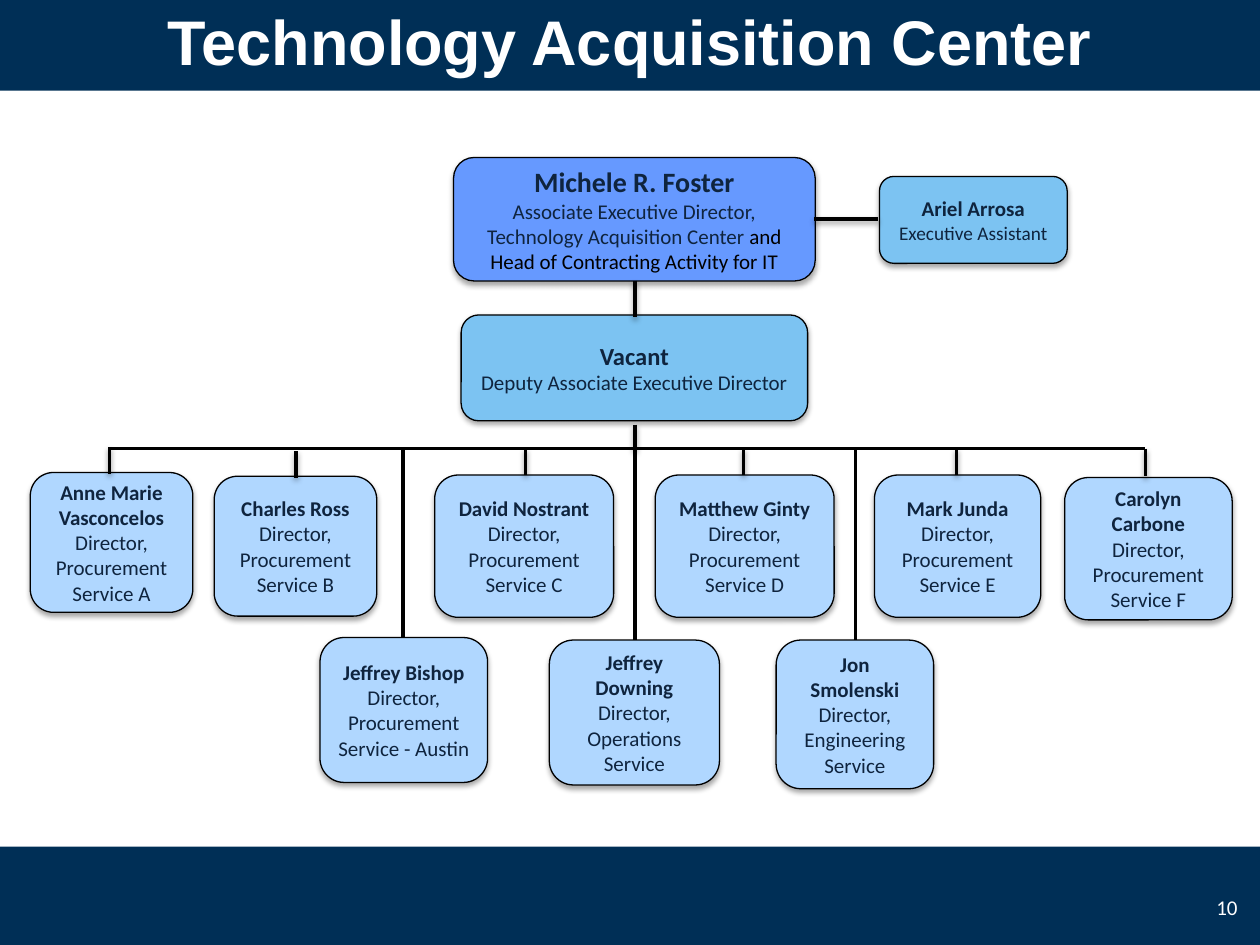
from lxml.etree import SubElement
from pptx import Presentation
from pptx.dml.color import RGBColor
from pptx.enum.shapes import MSO_CONNECTOR, MSO_SHAPE
from pptx.enum.text import MSO_ANCHOR, PP_ALIGN
from pptx.oxml.ns import qn
from pptx.util import Inches, Pt

COLORS = {
    "navy": "002F56", "white": "FFFFFF", "black": "000000", "ink": "0F243E",
    "chief": "6699FF", "deputy": "7CC3F2", "director": "B0D7FF",
}
BUS_Y = 3.56
TRUNK_X = 5.04

DIRECTORS = [
    ((0.24, 3.75, 1.29, 1.11), "Anne Marie Vasconcelos", "Procurement Service A"),
    ((1.7, 3.78, 1.29, 1.11), "Charles Ross", "Procurement Service B"),
    ((3.45, 3.77, 1.42, 1.13), "David Nostrant", "Procurement Service C"),
    ((5.2, 3.77, 1.42, 1.13), "Matthew Ginty", "Procurement Service D"),
    ((6.94, 3.77, 1.32, 1.13), "Mark Junda", "Procurement Service E"),
    ((8.45, 3.79, 1.33, 1.13), "Carolyn Carbone", "Procurement Service F"),
    ((2.54, 5.06, 1.33, 1.15), "Jeffrey Bishop", "Procurement Service - Austin"),
    ((4.36, 5.08, 1.35, 1.15), "Jeffrey Downing", "Operations Service"),
    ((6.16, 5.08, 1.25, 1.18), "Jon Smolenski", "Engineering Service"),
]
BUS_LINES = [
    (0.87, BUS_Y, 9.09, BUS_Y), (3.2, BUS_Y, 3.2, 5.06),
    (TRUNK_X, BUS_Y, TRUNK_X, 5.08), (6.79, BUS_Y, 6.79, 5.08),
]
LINKS = [
    (6.46, 1.74, 6.97, 1.74),
    (TRUNK_X, 2.23, TRUNK_X, 2.52), (TRUNK_X, 3.37, TRUNK_X, 3.58),
    (0.87, 3.55, 0.87, 3.76), (2.35, 3.58, 2.35, 3.79),
    (4.17, BUS_Y, 4.17, 3.77), (5.9, BUS_Y, 5.9, 3.77),
    (7.59, BUS_Y, 7.59, 3.77), (9.09, BUS_Y, 9.09, 3.78),
]


def rgb(name):
    return RGBColor.from_string(COLORS[name])


def set_shadow(s, alpha=0, distance=0):
    effects = SubElement(s._element.spPr, qn("a:effectLst"))
    if alpha:
        shadow = SubElement(effects, qn("a:outerShdw"), blurRad=str(Pt(3.1)),
                            dist=str(Pt(distance)), dir="5400000", rotWithShape="0")
        color = SubElement(shadow, qn("a:srgbClr"), val=COLORS["black"])
        SubElement(color, qn("a:alpha"), val=str(alpha * 1000))


def add_runs(p, runs, align=PP_ALIGN.CENTER):
    p.alignment = align
    for text, size, bold, color, font in runs:
        r = p.add_run()
        r.text = text
        for key, value in {"size": Pt(size), "bold": bold, "name": font}.items():
            setattr(r.font, key, value)
        r.font.color.rgb = rgb(color)


def format_frame(tf, side=0.08, edge=0.08):
    settings = {
        "word_wrap": True, "vertical_anchor": MSO_ANCHOR.MIDDLE,
        "margin_left": Inches(side), "margin_right": Inches(side),
        "margin_top": Inches(edge), "margin_bottom": Inches(edge),
    }
    for key, value in settings.items():
        setattr(tf, key, value)


def add_band(slide, top):
    s = slide.shapes.add_shape(MSO_SHAPE.RECTANGLE, 0, Inches(top), Inches(10), Inches(0.8))
    s.fill.solid()
    s.fill.fore_color.rgb = rgb("navy")
    s.line.fill.background()
    s.shadow.inherit = False


def add_label(slide, at, run, align):
    tf = slide.shapes.add_textbox(*map(Inches, at)).text_frame
    format_frame(tf, 0.1, 0.05)
    add_runs(tf.paragraphs[0], [run], align)


def add_box(slide, at, fill, paragraphs, side=0.08):
    s = slide.shapes.add_shape(MSO_SHAPE.ROUNDED_RECTANGLE, *map(Inches, at))
    s.fill.solid()
    s.fill.fore_color.rgb = rgb(fill)
    s.line.color.rgb = rgb("black")
    s.line.width = Pt(0.75)
    set_shadow(s, 35, 1.8)
    tf = s.text_frame
    format_frame(tf, side)
    for i, runs in enumerate(paragraphs):
        p = tf.add_paragraph() if i else tf.paragraphs[0]
        add_runs(p, runs)


def add_person(slide, at, fill, name, role, name_size=12, role_size=12, side=0.08):
    add_box(slide, at, fill, [
        [(name, name_size, True, "ink", "Calibri")],
        [(role, role_size, False, "ink", "Calibri")],
    ], side)


def add_line(slide, ends, alpha=0):
    s = slide.shapes.add_connector(MSO_CONNECTOR.STRAIGHT, *map(Inches, ends))
    s.line.color.rgb = rgb("black")
    s.line.width = Pt(2)
    set_shadow(s, alpha, 1.6)


def main():
    prs = Presentation()
    prs.slide_width, prs.slide_height = Inches(10), Inches(7.5)
    slide = prs.slides.add_slide(prs.slide_layouts[6])

    for top in (6.72, -0.08):
        add_band(slide, top)
    add_label(slide, (9.5, 7, 0.42, 0.4), ("10", 12, False, "white", "Calibri"), PP_ALIGN.RIGHT)

    for ends in BUS_LINES:
        add_line(slide, ends)

    add_box(slide, (3.6, 1.25, 2.87, 0.98), "chief", [
        [("Michele R. Foster", 16, True, "ink", "Calibri")],
        [("Associate Executive Director,", 12, False, "ink", "Calibri")],
        [("Technology Acquisition Center ", 12, False, "ink", "Calibri"),
         ("and Head of Contracting Activity for IT", 12, False, "black", "Calibri")],
    ])
    add_person(slide, (6.98, 1.4, 1.49, 0.69), "deputy",
               "Ariel Arrosa", "Executive Assistant", role_size=11)
    add_person(slide, (3.66, 2.5, 2.75, 0.84), "deputy",
               "Vacant", "Deputy Associate Executive Director", name_size=14)
    for at, name, service in DIRECTORS:
        side = 0.12 if at[2] < 1.29 else 0.08
        add_person(slide, at, "director", name, f"Director, {service}", side=side)

    for ends in LINKS:
        add_line(slide, ends, 38)
    add_label(slide, (0, -0.08, 10, 0.8),
              ("Technology Acquisition Center", 36, True, "white", "Arial"), PP_ALIGN.CENTER)

    prs.save("out.pptx")


if __name__ == "__main__":
    main()
